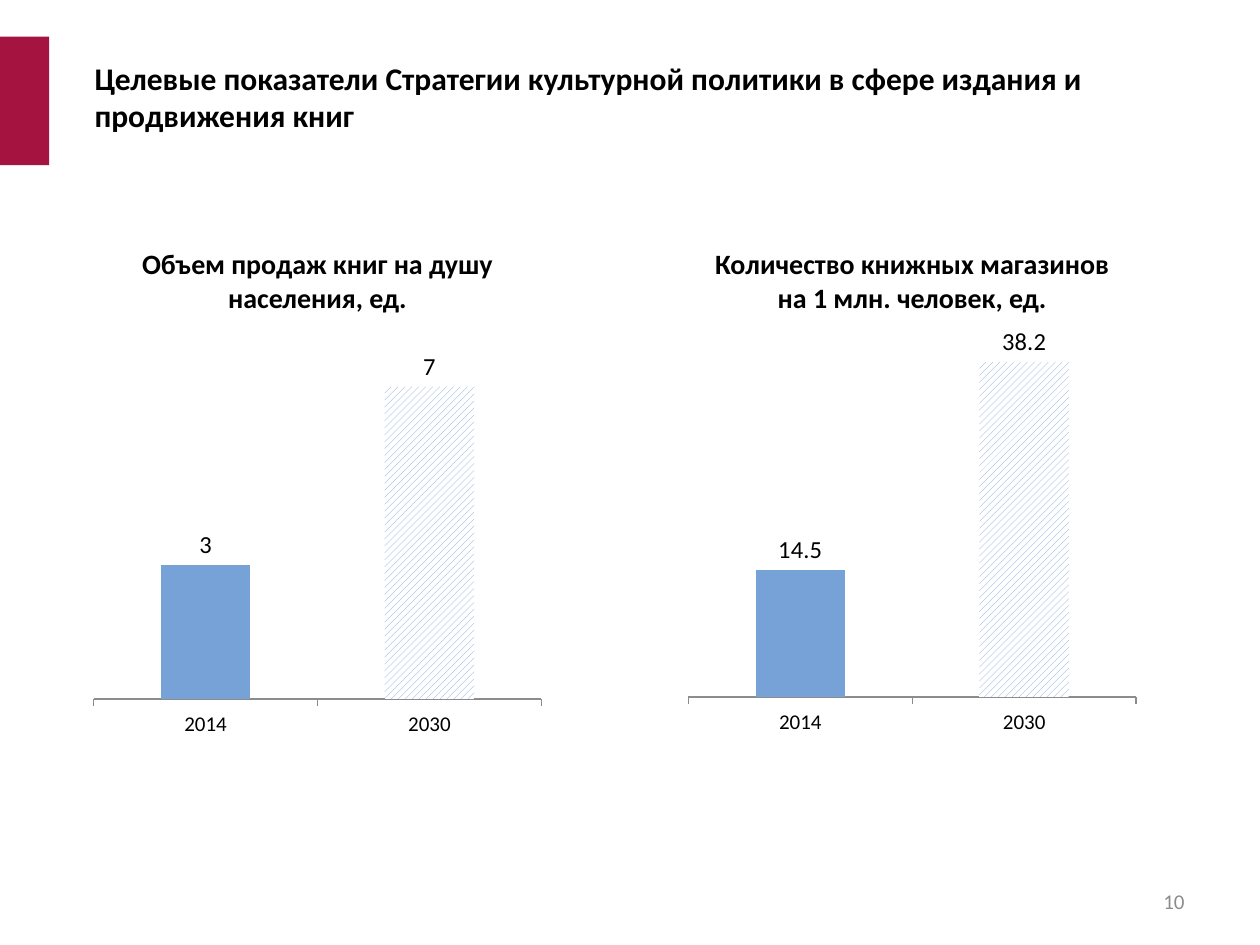
from pptx import Presentation
from pptx.chart.data import CategoryChartData
from pptx.dml.color import RGBColor
from pptx.enum.chart import XL_CHART_TYPE, XL_LABEL_POSITION, XL_TICK_LABEL_POSITION, XL_TICK_MARK
from pptx.enum.dml import MSO_PATTERN
from pptx.enum.shapes import MSO_SHAPE
from pptx.enum.text import MSO_ANCHOR, PP_ALIGN
from pptx.util import Inches, Pt

BLACK = RGBColor(0x00, 0x00, 0x00)
WHITE = RGBColor(0xFF, 0xFF, 0xFF)
GRAY = RGBColor(0x8C, 0x8C, 0x8C)
BLUE = RGBColor(0x77, 0xA2, 0xD7)
CRIMSON = RGBColor(0xA5, 0x13, 0x40)


class SlideBuilder:
    """Adds consistently styled elements to one slide."""

    font_name = "Calibri"

    def __init__(self, slide):
        self.slide = slide

    def style_font(self, font, size, color=BLACK, bold=False):
        font.name = self.font_name
        font.size = Pt(size)
        font.bold = bold
        font.color.rgb = color

    def set_text(self, box, text, size, align, anchor, color=BLACK, bold=False):
        frame = box.text_frame
        frame.word_wrap = True
        frame.vertical_anchor = anchor
        frame.text = text
        para = frame.paragraphs[0]
        para.alignment = align
        for span in para.runs:
            self.style_font(span.font, size, color, bold)

    def title(self, text, left, top, width, height):
        box = self.slide.shapes.title
        box.left, box.top = Inches(left), Inches(top)
        box.width, box.height = Inches(width), Inches(height)
        self.set_text(box, text, 18, PP_ALIGN.LEFT, MSO_ANCHOR.MIDDLE, bold=True)

    def text(self, text, left, top, width, height, **style):
        box = self.slide.shapes.add_textbox(
            Inches(left), Inches(top), Inches(width), Inches(height))
        self.set_text(box, text, **style)

    def accent(self, left, top, width, height):
        shape = self.slide.shapes.add_shape(
            MSO_SHAPE.RECTANGLE, Inches(left), Inches(top), Inches(width), Inches(height))
        shape.shadow.inherit = False
        shape.fill.solid()
        shape.fill.fore_color.rgb = CRIMSON
        shape.line.fill.background()

    def column_chart(self, values, maximum, left, top, width, height):
        data = CategoryChartData()
        data.categories = ["2014", "2030"]
        data.add_series("Series 1", values)
        chart = self.slide.shapes.add_chart(
            XL_CHART_TYPE.COLUMN_CLUSTERED, Inches(left), Inches(top),
            Inches(width), Inches(height), data).chart
        chart.has_legend = False
        chart.has_title = False
        self.style_font(chart.font, 18)

        value_axis = chart.value_axis
        value_axis.visible = False
        value_axis.has_major_gridlines = False
        value_axis.minimum_scale = 0
        value_axis.maximum_scale = maximum

        category_axis = chart.category_axis
        category_axis.major_tick_mark = XL_TICK_MARK.OUTSIDE
        category_axis.tick_label_position = XL_TICK_LABEL_POSITION.NEXT_TO_AXIS
        category_axis.format.line.color.rgb = GRAY
        self.style_font(category_axis.tick_labels.font, 12)

        plot = chart.plots[0]
        plot.gap_width = 150
        plot.vary_by_categories = False
        series = plot.series[0]
        series.format.fill.solid()
        series.format.fill.fore_color.rgb = BLUE
        target_fill = series.points[1].format.fill
        target_fill.patterned()
        target_fill.pattern = MSO_PATTERN.WIDE_UPWARD_DIAGONAL
        target_fill.fore_color.rgb = BLUE
        target_fill.back_color.rgb = WHITE

        labels = series.data_labels
        labels.show_value = True
        labels.position = XL_LABEL_POSITION.OUTSIDE_END
        self.style_font(labels.font, 14)


def main():
    deck = Presentation()
    deck.slide_width, deck.slide_height = Inches(10), Inches(7.5)
    page = SlideBuilder(deck.slides.add_slide(deck.slide_layouts[5]))

    page.accent(0, 0.29, 0.39, 1.02)
    page.title("Целевые показатели Стратегии культурной политики в сфере издания и продвижения книг",
               0.65, 0.14, 8.61, 1.25)

    indicators = [
        ("Объем продаж книг на душу населения, ед.", (3, 7), 8, 0.67, 2.65, 3.26),
        ("Количество книжных магазинов на 1 млн. человек, ед.", (14.5, 38.2), 45, 5.39, 2.33, 3.57),
    ]
    for heading, values, maximum, left, top, height in indicators:
        page.column_chart(values, maximum, left, top, 3.7, height)
        page.text(heading, left + 0.08, 1.91, 3.54, 0.64, size=16,
                  align=PP_ALIGN.CENTER, anchor=MSO_ANCHOR.TOP, bold=True)

    page.text("10", 7.17, 6.95, 2.33, 0.4, size=12,
              align=PP_ALIGN.RIGHT, anchor=MSO_ANCHOR.MIDDLE, color=GRAY)
    deck.save("out.pptx")


if __name__ == "__main__":
    main()
